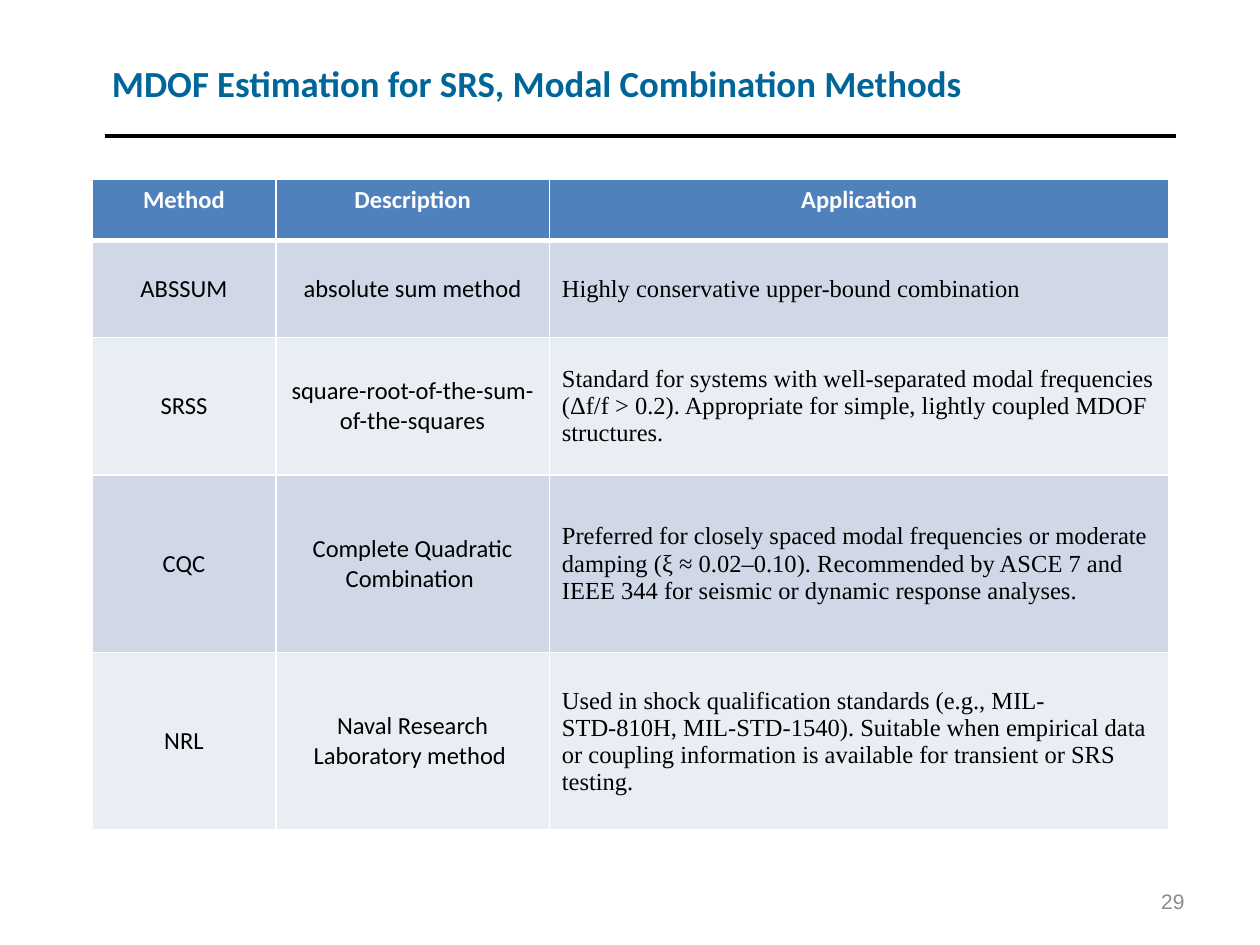
import pptx
import pptx.util
import pptx.dml.color
import pptx.enum.shapes
import pptx.enum.text
import pptx.oxml
import pptx.oxml.ns

Inches = pptx.util.Inches
Pt = pptx.util.Pt
ALIGN = pptx.enum.text.PP_ALIGN
ANCHOR = pptx.enum.text.MSO_ANCHOR

COLUMN_WIDTHS = [1.46, 2.17, 4.92]
ROW_HEIGHTS = [0.49, 0.77, 1.09, 1.41, 1.41]
ROWS = [
    ("Method", "Description", "Application"),
    ("ABSSUM", "absolute sum method", "Highly conservative upper-bound combination"),
    ("SRSS", "square-root-of-the-sum-of-the-squares",
     "Standard for systems with well-separated modal frequencies (Δf/f > 0.2). "
     "Appropriate for simple, lightly coupled MDOF structures."),
    ("CQC", "Complete Quadratic Combination ",
     "Preferred for closely spaced modal frequencies or moderate damping (ξ ≈ 0.02–0.10). "
     "Recommended by ASCE 7 and IEEE 344 for seismic or dynamic response analyses."),
    ("NRL", "Naval Research Laboratory method ",
     "Used in shock qualification standards (e.g., MIL-STD-810H, MIL-STD-1540). "
     "Suitable when empirical data or coupling information is available for transient "
     "or SRS testing."),
]


def color(value):
    return pptx.dml.color.RGBColor.from_string(value)


def add_run(paragraph, text, size, font, fill, bold=False):
    run = paragraph.add_run()
    run.text = text
    run.font.size = Pt(size)
    run.font.name = font
    run.font.bold = bold
    run.font.color.rgb = color(fill)


def add_text(slide, left, top, width, height, anchor, alignment, *run):
    shape = slide.shapes.add_textbox(Inches(left), Inches(top), Inches(width), Inches(height))
    shape.text_frame.word_wrap = True
    shape.text_frame.vertical_anchor = anchor
    paragraph = shape.text_frame.paragraphs[0]
    paragraph.alignment = alignment
    add_run(paragraph, *run)


def add_rule(slide, left, top, width):
    connector = slide.shapes.add_connector(
        pptx.enum.shapes.MSO_CONNECTOR.STRAIGHT,
        Inches(left), Inches(top), Inches(left + width), Inches(top))
    connector.line.color.rgb = color("000000")
    connector.line.width = Pt(2.25)
    connector._element.spPr.append(pptx.oxml.parse_xml(
        f'<a:effectLst {pptx.oxml.ns.nsdecls("a")}/>'))


def add_borders(cell, bottom, top):
    properties = cell._tc.get_or_add_tcPr()
    for side, width in (("L", 1), ("R", 1), ("T", top), ("B", bottom)):
        properties.append(pptx.oxml.parse_xml(
            f'<a:ln{side} {pptx.oxml.ns.nsdecls("a")} w="{Pt(width)}">'
            f'<a:solidFill><a:srgbClr val="FFFFFF"/></a:solidFill></a:ln{side}>'))


def fill_cell(cell, text, row, column):
    header = row == 0
    add_borders(cell, bottom=3 if header else 1, top=3 if row == 1 else 1)
    cell.fill.solid()
    cell.fill.fore_color.rgb = color(
        "4F81BD" if header else "D0D8E8" if row % 2 else "E9EDF4")
    cell.vertical_anchor = ANCHOR.TOP if header else ANCHOR.MIDDLE
    paragraph = cell.text_frame.paragraphs[0]
    application = column == 2 and not header
    paragraph.alignment = ALIGN.LEFT if application else ALIGN.CENTER
    if not header:
        paragraph.space_before = paragraph.space_after = Pt(6)
    add_run(paragraph, text, 14, "Times New Roman" if application else "Calibri",
            "FFFFFF" if header else "000000", header)


def add_methods_table(slide, left, top, width, height):
    table = slide.shapes.add_table(
        len(ROWS), len(COLUMN_WIDTHS),
        Inches(left), Inches(top), Inches(width), Inches(height)).table
    for column, column_width in zip(table.columns, COLUMN_WIDTHS):
        column.width = Inches(column_width)
    for row, row_height in zip(table.rows, ROW_HEIGHTS):
        row.height = Inches(row_height)
    for row, texts in enumerate(ROWS):
        for column, text in enumerate(texts):
            fill_cell(table.cell(row, column), text, row, column)


def main():
    presentation = pptx.Presentation()
    presentation.slide_width = Inches(10)
    presentation.slide_height = Inches(7.5)
    slide = presentation.slides.add_slide(presentation.slide_layouts[6])
    add_text(slide, 7.17, 6.95, 2.33, 0.4, ANCHOR.MIDDLE, ALIGN.RIGHT,
             "29", 12, "Arial", "8C8C8C")
    add_text(slide, 0.79, 0.43, 8.21, 0.45, ANCHOR.TOP, ALIGN.LEFT,
             "MDOF Estimation for SRS, Modal Combination Methods",
             21, "Calibri", "006699", True)
    add_rule(slide, 0.83, 1.08, 8.5)
    add_methods_table(slide, 0.73, 1.42, sum(COLUMN_WIDTHS), sum(ROW_HEIGHTS))
    presentation.save("out.pptx")


if __name__ == "__main__":
    main()
